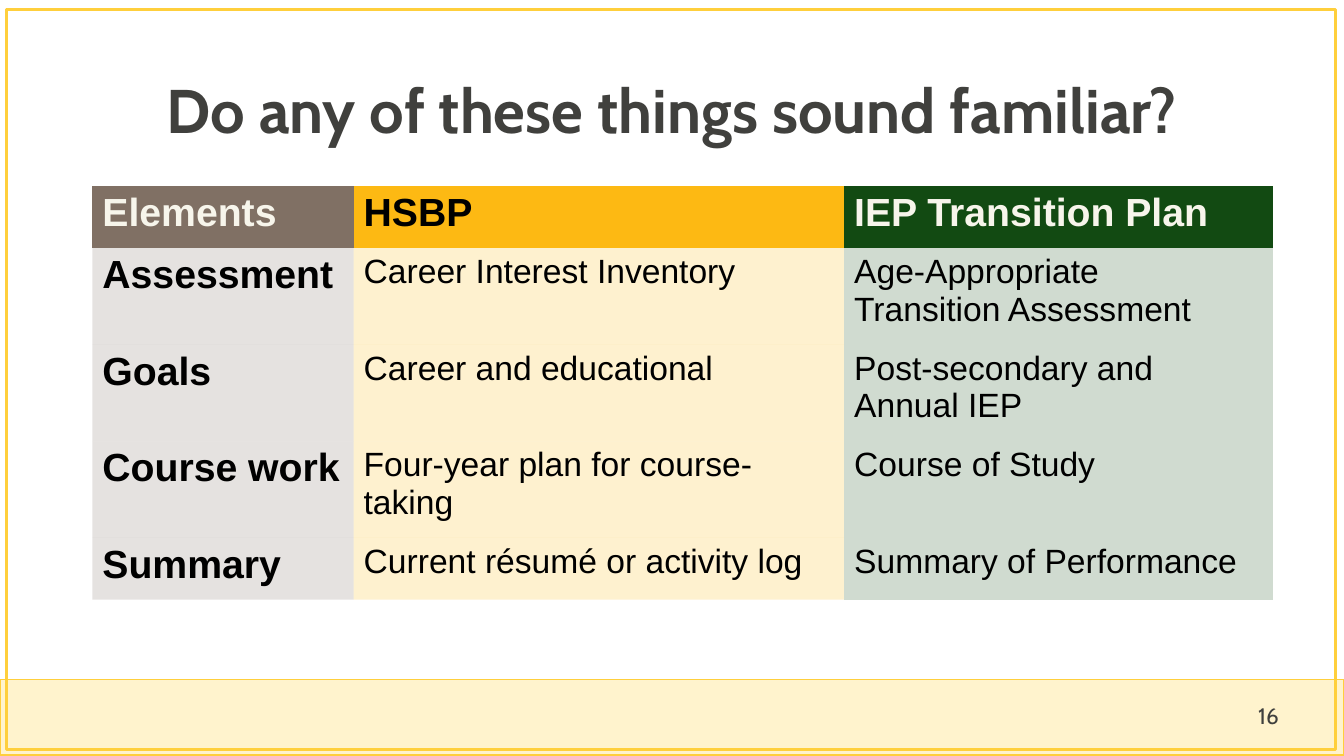
from dataclasses import dataclass

from lxml import etree
from pptx import Presentation
from pptx import util as u
from pptx.dml.color import RGBColor
from pptx.enum import shapes, text
from pptx.oxml import ns

COLUMNS, ROWS = 160, 90
UNIT = u.Inches(1 / 12)
NO_STYLE = "{2D5ABB26-0587-4C30-8999-92F81FD0307C}"
COLOURS = {
    "ink": "40403D", "black": "000000", "ivory": "F7F5EB", "gold": "FFCF3C",
    "cream": "FFF3CD", "brown": "807064", "amber": "FDB913",
    "green": "124A12", "sage": "D0DBD0",
}


@dataclass(frozen=True)
class Area:
    """Place on the grid, in columns and rows."""
    left: float
    top: float
    width: float
    height: float

    def lengths(self) -> list[int]:
        """Return left, top, width and height as slide lengths."""
        return [grid(n) for n in (self.left, self.top, self.width, self.height)]


@dataclass(frozen=True)
class Style:
    """Look of a run of text."""
    size: int
    font: str
    colour: str
    bold: bool = False


@dataclass(frozen=True)
class Panel:
    """Rectangle of the slide's frame."""
    area: Area
    line_width: float
    fill: str | None = None


@dataclass(frozen=True)
class Label:
    """Text box with one line of text."""
    area: Area
    words: str
    style: Style
    align: text.PP_ALIGN
    spacing: float = 1.0


@dataclass(frozen=True)
class TableColumn:
    """Column of the table: its heading, body and colours."""
    width: float
    heading: str
    heading_fill: str
    heading_colour: str
    entries: tuple[str, ...]
    body_fill: str
    body_opacity: int
    body_style: Style


PANELS = (
    Panel(Area(0, 80.9, COLUMNS, 9), 1, "cream"),
    Panel(Area(0.8, 1.1, 158.2, 88.1), 2.25),
)
LABELS = (
    Label(Area(11, 4.8, 138, 17.4), "Do any of these things sound familiar?",
          Style(44, "Cabin", "ink", True), text.PP_ALIGN.CENTER, 0.9),
    Label(Area(148.6, 82.8, 8.4, 4.8), "16",
          Style(16, "Cabin", "ink"), text.PP_ALIGN.LEFT),
)
ELEMENT_STYLE = Style(28, "Arial", "black", True)
ENTRY_STYLE = Style(24, "Arial", "black")
TABLE_LEFT, TABLE_TOP = 11, 22.2
ROW_HEIGHTS = (7.35, 11.5, 11.5, 11.5, 7.35)
TABLE_COLUMNS = (
    TableColumn(31.1, "Elements", "brown", "ivory",
                ("Assessment", "Goals", "Course work", "Summary"),
                "brown", 20, ELEMENT_STYLE),
    TableColumn(58.4, "HSBP", "amber", "black",
                ("Career Interest Inventory", "Career and educational",
                 "Four-year plan for course-taking",
                 "Current résumé or activity log"),
                "amber", 20, ENTRY_STYLE),
    TableColumn(51.1, "IEP Transition Plan", "green", "ivory",
                ("Age-Appropriate\vTransition Assessment",
                 "Post-secondary and\nAnnual IEP", "Course of Study",
                 "Summary of Performance"),
                "sage", 100, ENTRY_STYLE),
)


def grid(count: float) -> int:
    """Turn a number of grid units into a slide length."""
    return u.Emu(round(count * UNIT))


def rgb(name: str) -> RGBColor:
    """Look up a colour by name."""
    return RGBColor.from_string(COLOURS[name])


def add_span(para, words: str, style: Style) -> None:
    """Add one styled run to a paragraph."""
    span = para.add_run()
    span.text = words
    span.font.size = u.Pt(style.size)
    span.font.name = style.font
    span.font.bold = style.bold
    span.font.color.rgb = rgb(style.colour)


def write(frame, words: str, style: Style) -> None:
    """Write paragraphs and line breaks into a text frame."""
    for index, block in enumerate(words.split("\n")):
        para = frame.add_paragraph() if index else frame.paragraphs[0]
        for number, line in enumerate(block.split("\v")):
            if number:
                para.add_line_break()
            add_span(para, line, style)


def draw_panel(page, panel: Panel) -> None:
    """Draw a gold-edged rectangle."""
    shape = page.shapes.add_shape(
        shapes.MSO_SHAPE.RECTANGLE, *panel.area.lengths())
    shape.shadow.inherit = False
    shape.line.color.rgb = rgb("gold")
    shape.line.width = u.Pt(panel.line_width)
    if panel.fill:
        shape.fill.solid()
        shape.fill.fore_color.rgb = rgb(panel.fill)
    else:
        shape.fill.background()


def draw_label(page, label: Label) -> None:
    """Draw a vertically centred text box."""
    box = page.shapes.add_textbox(*label.area.lengths())
    frame = box.text_frame
    frame.word_wrap = True
    frame.vertical_anchor = text.MSO_ANCHOR.MIDDLE
    write(frame, label.words, label.style)
    frame.paragraphs[0].alignment = label.align
    frame.paragraphs[0].line_spacing = label.spacing


def fill_cell(cell, words: str, style: Style, fill: str, opacity: int) -> None:
    """Write a cell and paint it with the given opacity in percent."""
    write(cell.text_frame, words, style)
    cell.fill.solid()
    cell.fill.fore_color.rgb = rgb(fill)
    if opacity < 100:
        solid = cell.fill.fore_color and cell.text_frame._txBody.getparent()
        colour = next(solid.iter(ns.qn("a:tcPr"))).find(".//" + ns.qn("a:srgbClr"))
        etree.SubElement(colour, ns.qn("a:alpha"), val=str(opacity * 1000))


def draw_table(page) -> None:
    """Draw the comparison table column by column."""
    area = Area(TABLE_LEFT, TABLE_TOP,
                sum(column.width for column in TABLE_COLUMNS), sum(ROW_HEIGHTS))
    holder = page.shapes.add_table(
        len(ROW_HEIGHTS), len(TABLE_COLUMNS), *area.lengths())
    next(holder.element.iter(ns.qn("a:tableStyleId"))).text = NO_STYLE
    table = holder.table
    table.horz_banding = False
    for row, height in zip(table.rows, ROW_HEIGHTS):
        row.height = grid(height)
    for index, column in enumerate(TABLE_COLUMNS):
        table.columns[index].width = grid(column.width)
        fill_cell(table.cell(0, index), column.heading,
                  Style(28, "Arial", column.heading_colour, True),
                  column.heading_fill, 100)
        for number, entry in enumerate(column.entries, start=1):
            fill_cell(table.cell(number, index), entry, column.body_style,
                      column.body_fill, column.body_opacity)


def main() -> None:
    """Build the slide and save the deck."""
    deck = Presentation()
    deck.slide_width, deck.slide_height = grid(COLUMNS), grid(ROWS)
    page = deck.slides.add_slide(deck.slide_layouts[6])
    for panel in PANELS:
        draw_panel(page, panel)
    for label in LABELS:
        draw_label(page, label)
    draw_table(page)
    deck.save("out.pptx")


if __name__ == "__main__":
    main()
